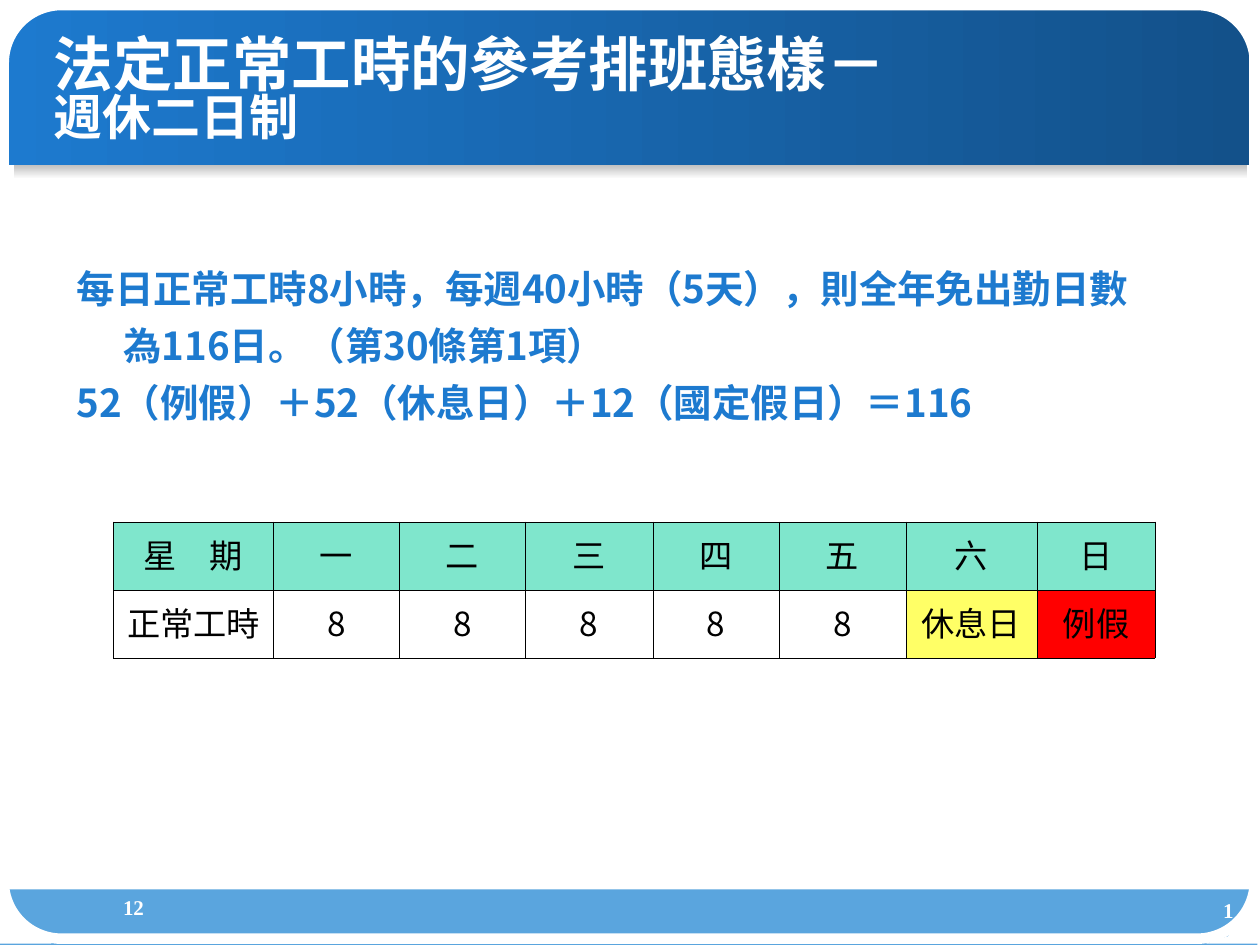
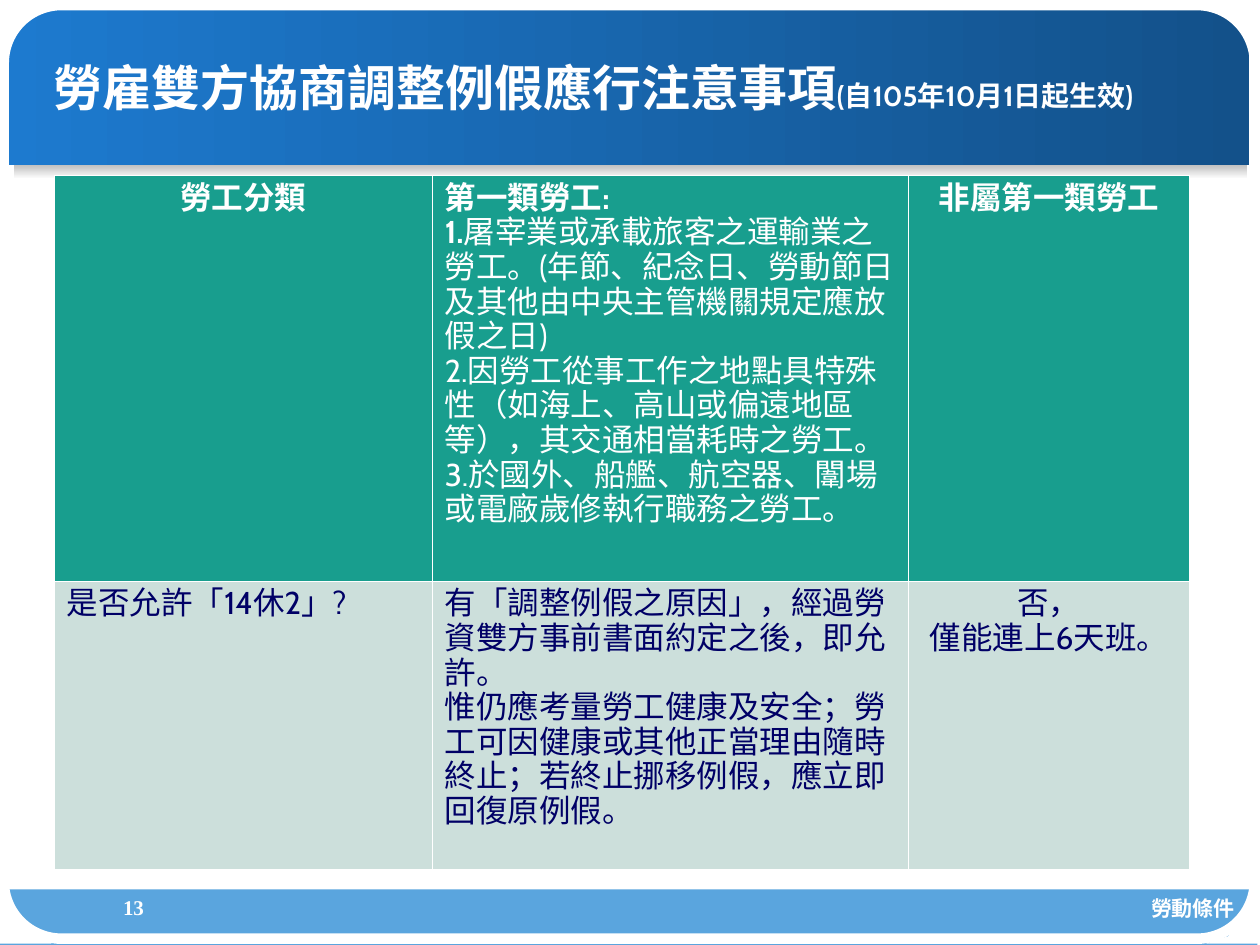
from dataclasses import dataclass
from typing import NamedTuple

from lxml import etree
from pptx import Presentation
from pptx.dml.color import RGBColor as RGB
from pptx.enum.shapes import MSO_SHAPE as SHAPE
from pptx.enum.text import MSO_ANCHOR as ANCHOR, PP_ALIGN as ALIGN
from pptx.oxml.ns import qn
from pptx.util import Inches, Pt

HUES = {
    "white": "FFFFFF", "black": "000000", "blue": "1D7ACF", "deep": "13518A",
    "sky": "5AA5DE", "grey": "C0C0C0", "mint": "7FE6CC", "yellow": "FFFF66",
    "red": "FF0000", "teal": "189E8E", "pale": "CCDFDB", "navy": "000066",
}
NOTO, CABIN, TIMES = "Noto Sans CJK TC", "Cabin", "Times New Roman"


class Run(NamedTuple):
    text: str
    size: float | None = None
    bold: bool | None = None


class Box(NamedTuple):
    left: float
    top: float
    width: float
    height: float

    def place(self) -> list:
        return [Inches(side) for side in self]


@dataclass
class Band:
    kind: SHAPE
    box: Box
    fill: tuple = ()
    angle: int = 0
    line: float = 0


@dataclass
class Cell:
    paras: list
    fill: str | None = None
    color: str = "black"
    bold: bool = False
    align: ALIGN = ALIGN.CENTER


@dataclass
class Grid:
    box: Box
    cols: list
    rows: list
    cells: list
    size: float
    font: str
    spacing: float
    edge: str


BANDS = [
    Band(SHAPE.RECTANGLE, Box(0, 0.01, 9.91, 1.3), ("blue", "deep")),
    Band(SHAPE.RECTANGLE, Box(0, 7.06, 9.98, 0.44), ("sky",)),
    Band(SHAPE.RECTANGLE, Box(0.11, 1.31, 9.79, 0.11), ("grey", "white"), 270),
    Band(SHAPE.ROUNDED_RECTANGLE, Box(0.03, 0.04, 9.93, 7.41), line=6),
]
CORNERS = [
    [(-0.01, 0.48), (0.12, 0.25), (0.26, 0.06), (0.48, 0), (-0.02, 0)],
    [(0.41, 7.49), (0.2, 7.33), (0.04, 7.17), (-0.01, 6.92), (-0.01, 7.49)],
    [(9.99, 6.99), (9.87, 7.24), (9.75, 7.43), (9.57, 7.49), (10, 7.49)],
    [(9.5, 0), (9.74, 0.14), (9.93, 0.28), (9.99, 0.49), (9.99, 0)],
]


def hue(name: str) -> RGB:
    return RGB.from_string(HUES[name])


def write(frame, paras: list, *, size: float, font: str = NOTO,
          color: str = "white", bold: bool = True, align: ALIGN = ALIGN.LEFT,
          spacing: float = 1.0, hang: float = 0) -> None:
    """Fill a frame; each paragraph is a string or a list of runs."""
    for i, para in enumerate(paras):
        item = frame.add_paragraph() if i else frame.paragraphs[0]
        item.alignment, item.line_spacing = align, spacing
        if hang:
            props = item._p.get_or_add_pPr()
            props.set("marL", str(Inches(hang)))
            props.set("indent", str(-Inches(hang)))
        for part in [Run(para)] if isinstance(para, str) else para:
            if part.text == "\n":
                item.add_line_break()
                continue
            run = item.add_run()
            run.text = part.text
            run.font.size = Pt(part.size or size)
            run.font.bold = bold if part.bold is None else part.bold
            run.font.name = font
            run.font.color.rgb = hue(color)
            asian = etree.SubElement(run._r.get_or_add_rPr(), qn("a:ea"))
            asian.set("typeface", NOTO)


def label(slide, box: Box, paras: list, anchor: ANCHOR = ANCHOR.TOP,
          **style) -> None:
    frame = slide.shapes.add_textbox(*box.place()).text_frame
    frame.word_wrap = True
    frame.vertical_anchor = anchor
    write(frame, paras, **style)


def draw_band(slide, band: Band) -> None:
    shape = slide.shapes.add_shape(band.kind, *band.box.place())
    shape.shadow.inherit = False
    if len(band.fill) == 2:
        shape.fill.gradient()
        shape.fill.gradient_angle = band.angle
        for stop, name in zip(shape.fill.gradient_stops, band.fill):
            stop.color.rgb = hue(name)
    elif band.fill:
        shape.fill.solid()
        shape.fill.fore_color.rgb = hue(band.fill[0])
    else:
        shape.fill.background()
    if band.line:
        shape.adjustments[0] = 0.062
        shape.line.color.rgb = hue("white")
        shape.line.width = Pt(band.line)
    else:
        shape.line.fill.background()


def draw_corner(slide, points: list) -> None:
    start, *rest = [(Inches(x), Inches(y)) for x, y in points]
    pen = slide.shapes.build_freeform(*start)
    pen.add_line_segments(rest, close=True)
    shape = pen.convert_to_shape()
    shape.shadow.inherit = False
    shape.fill.solid()
    shape.fill.fore_color.rgb = hue("white")
    shape.line.fill.background()


def add_edges(cell, name: str) -> None:
    props = cell._tc.get_or_add_tcPr()
    for side in ("lnL", "lnR", "lnT", "lnB"):
        line = etree.SubElement(props, qn(f"a:{side}"), w=str(Pt(0.06)))
        fill = etree.SubElement(line, qn("a:solidFill"))
        etree.SubElement(fill, qn("a:srgbClr"), val=HUES[name])


def draw_grid(slide, grid: Grid) -> None:
    table = slide.shapes.add_table(
        len(grid.rows), len(grid.cols), *grid.box.place()).table
    table.first_row = table.horz_banding = False
    for col, width in zip(table.columns, grid.cols):
        col.width = Inches(width)
    for row, height, items in zip(table.rows, grid.rows, grid.cells):
        row.height = Inches(height)
        for cell, item in zip(row.cells, items):
            add_edges(cell, grid.edge)
            if item.fill:
                cell.fill.solid()
                cell.fill.fore_color.rgb = hue(item.fill)
            else:
                cell.fill.background()
            write(cell.text_frame, item.paras, size=grid.size, font=grid.font,
                  color=item.color, bold=item.bold, align=item.align,
                  spacing=grid.spacing)


def add_page(deck, title: list, number: str, font: str):
    """Add a slide with its bands, title and page number."""
    slide = deck.slides.add_slide(deck.slide_layouts[6])
    for band in BANDS:
        draw_band(slide, band)
    for points in CORNERS:
        draw_corner(slide, points)
    label(slide, Box(0.33, 0.43, 9.08, 0.61), [title], ANCHOR.MIDDLE,
          size=28, font=font, spacing=0.8)
    label(slide, Box(0.56, 7.05, 1, 0.34), [number],
          size=12, font=TIMES, align=ALIGN.CENTER)
    return slide


def add_hours(deck) -> None:
    title = [Run("法定正常工時的參考排班態樣－", 34), Run("\n"), Run("週休二日制")]
    slide = add_page(deck, title, "12", NOTO)
    days = [Cell([day], "mint") for day in ["星　期", *"一二三四五六日"]]
    hours = [Cell(["正常工時"]), *[Cell(["8"]) for _ in range(5)],
             Cell(["休息日"], "yellow"), Cell(["例假"], "red")]
    draw_grid(slide, Grid(
        Box(0.9, 4.14, 8.27, 1.08), [1.27, 1, 1, 1.01, 1, 1.01, 1.04, 0.94],
        [0.54, 0.54], [days, hours], 19, NOTO, 1.04, "black"))
    label(slide, Box(0.51, 1.97, 8.75, 1.97), [
        "每日正常工時8小時，每週40小時（5天），則全年免出勤日數為116日。（第30條第1項）",
        "52（例假）＋52（休息日）＋12（國定假日）＝116",
    ], size=22, color="blue", spacing=1.23, hang=0.37)
    badge = slide.shapes.add_shape(SHAPE.OVAL, *Box(9.5, 7, 0.5, 0.5).place())
    badge.shadow.inherit = False
    badge.fill.background()
    badge.line.fill.background()
    badge.text_frame.word_wrap = True
    badge.text_frame.vertical_anchor = ANCHOR.TOP
    write(badge.text_frame, ["12"], size=12, font=TIMES, align=ALIGN.CENTER)


def add_rules(deck) -> None:
    title = [Run("勞雇雙方協商調整例假應行注意事項"),
             Run("(自105年10月1日起生效)", 16)]
    slide = add_page(deck, title, "13", CABIN)
    first = [
        [Run("第一類勞工:", bold=True)],
        [Run("1.", bold=True),
         Run("屠宰業或承載旅客之運輸業之勞工。(年節、紀念日、勞動節日及其他由中央主管機關規定應放假之日)")],
        "2.因勞工從事工作之地點具特殊性（如海上、高山或偏遠地區等），其交通相當耗時之勞工。",
        "3.於國外、船艦、航空器、闈場或電廠歲修執行職務之勞工。",
    ]
    terms = [
        "有「調整例假之原因」，經過勞資雙方事前書面約定之後，即允許。",
        "惟仍應考量勞工健康及安全；勞工可因健康或其他正當理由隨時終止；若終止挪移例假，應立即回復原例假。",
    ]
    head = [Cell(["勞工分類"], "teal", "white", True),
            Cell(first, "teal", "white", align=ALIGN.LEFT),
            Cell(["非屬第一類勞工"], "teal", "white", True)]
    body = [Cell(["是否允許「14休2」?"], "pale", "navy", align=ALIGN.LEFT),
            Cell(terms, "pale", "navy", align=ALIGN.LEFT),
            Cell(["否，", "僅能連上6天班。"], "pale", "navy")]
    draw_grid(slide, Grid(
        Box(0.43, 1.39, 9.01, 5.51), [3, 3.78, 2.23], [3.22, 2.29],
        [head, body], 18, CABIN, 0.76, "white"))
    label(slide, Box(6.73, 7.06, 3.17, 0.35), ["勞動條件"],
          size=12, font=CABIN, align=ALIGN.RIGHT)


def main() -> None:
    deck = Presentation()
    deck.slide_width, deck.slide_height = Inches(10), Inches(7.5)
    add_hours(deck)
    add_rules(deck)
    deck.save("out.pptx")


if __name__ == "__main__":
    main()
